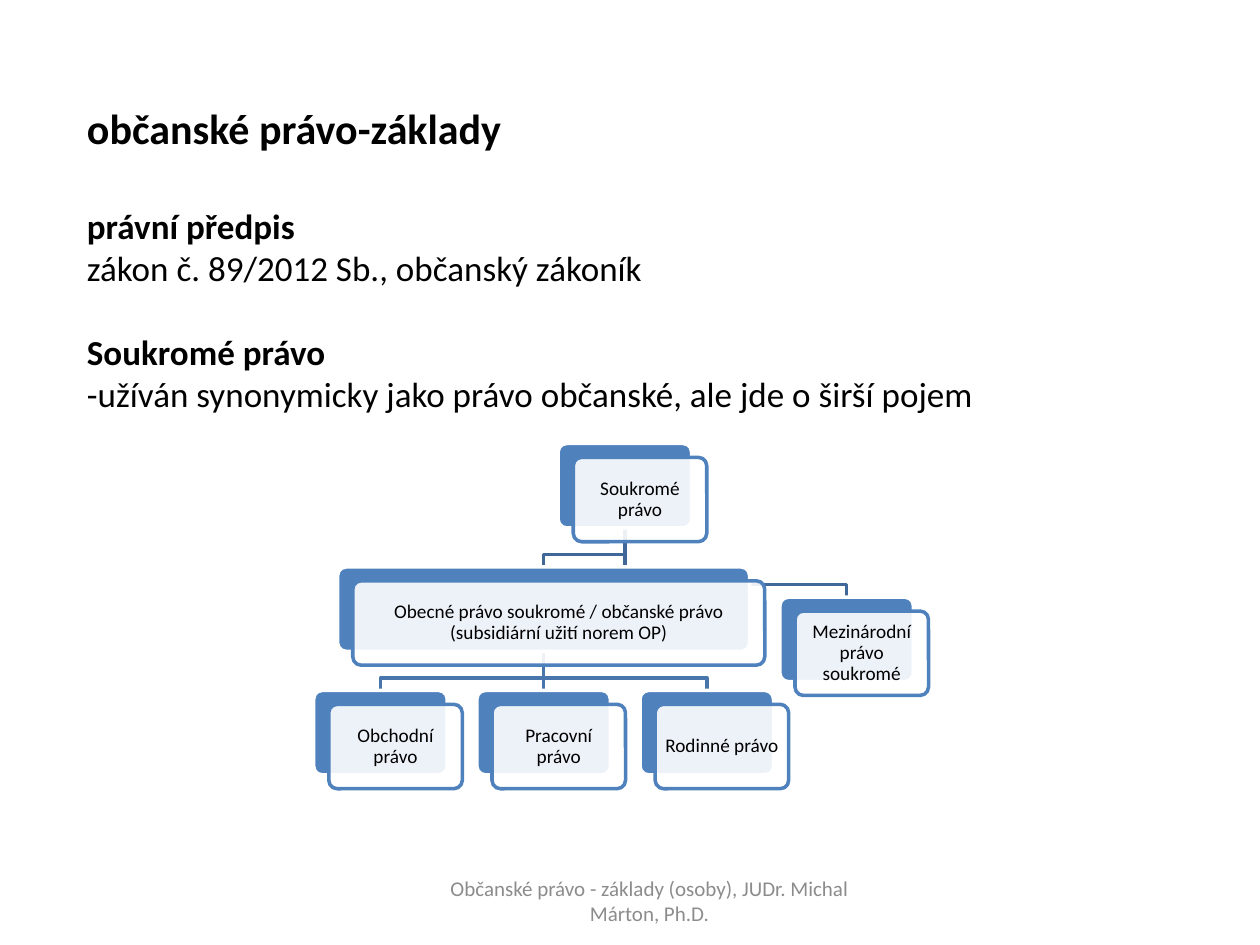
import pptx
import pptx.util
import pptx.dml.color
import pptx.enum.shapes
import pptx.enum.text
import pptx.oxml
import pptx.oxml.ns

Inches, Pt = pptx.util.Inches, pptx.util.Pt
KIND = pptx.enum.shapes.MSO_SHAPE
ALIGN = pptx.enum.text.PP_ALIGN
ANCHOR = pptx.enum.text.MSO_ANCHOR

# Content
TITLE = "občanské právo-základy"
BODY = [  # heading, explanation
    ("právní předpis", "zákon č. 89/2012 Sb., občanský zákoník"),
    ("Soukromé právo",
     "-užíván synonymicky jako právo občanské, ale jde o širší pojem"),
]
FOOTER = "Občanské právo - základy (osoby), JUDr. Michal Márton, Ph.D."

NARROW, WIDE, HIGH = 1.06, 3.27, 0.67
TOP, STEP, MID, GAP = 3.52, 0.98, 4.315, 1.295
TREE = {  # key: (text, parent, centre, top, width)
    "private": ("Soukromé právo", None, 4.96, TOP, NARROW),
    "general": ("Obecné právo soukromé / občanské právo "
                "(subsidiární užití norem OP)",
                "private", MID, TOP + STEP, WIDE),
    "trade": ("Obchodní právo", "general", MID - GAP, TOP + 2 * STEP, NARROW),
    "labour": ("Pracovní právo", "general", MID, TOP + 2 * STEP, NARROW),
    "family": ("Rodinné právo", "general", MID + GAP, TOP + 2 * STEP, NARROW),
    "world": ("Mezinárodní právo soukromé", "private", 6.72, 4.74, NARROW),
}

THEME = {
    "font": "Calibri", "title": 24, "body": 20, "card": 11, "foot": 12,
    "black": "000000", "white": "FFFFFF", "grey": "8C8C8C", "blue": "4F81BD",
    "private": "3F6797", "general": "4875AC", "line": 2,
}


def tint(name):
    return pptx.dml.color.RGBColor.from_string(THEME[name])


def write(par, text, size, color="black", bold=False, align=ALIGN.JUSTIFY):
    par.alignment = align
    run = par.add_run()
    run.text = text
    font = run.font
    font.name, font.size, font.bold = THEME["font"], Pt(THEME[size]), bold
    font.color.rgb = tint(color)


def place(shape, left, top, width, height):
    shape.left, shape.top = Inches(left), Inches(top)
    shape.width, shape.height = Inches(width), Inches(height)
    frame = shape.text_frame
    frame.word_wrap = True
    frame.auto_size = pptx.enum.text.MSO_AUTO_SIZE.NONE
    frame.vertical_anchor = ANCHOR.TOP
    return frame


def plain(par):
    props = par._p.get_or_add_pPr()
    props.set("marL", "0")
    props.set("indent", "0")
    props.append(pptx.oxml.parse_xml(
        "<a:buNone %s/>" % pptx.oxml.ns.nsdecls("a")))


def link(shapes, key):
    _, up, x2, y2, _ = TREE[key]
    _, _, x1, y1, _ = TREE[up]
    y1 += HIGH
    bend = y2 - 0.1
    if x1 == x2:
        shape = shapes.add_connector(
            pptx.enum.shapes.MSO_CONNECTOR.STRAIGHT,
            Inches(x1), Inches(y1), Inches(x2), Inches(y2))
        shape._element.spPr.append(pptx.oxml.parse_xml(
            "<a:effectLst %s/>" % pptx.oxml.ns.nsdecls("a")))
    else:
        pen = shapes.build_freeform(Inches(x1), Inches(y1))
        pen.add_line_segments(
            [(Inches(x), Inches(y))
             for x, y in ((x1, bend), (x2, bend), (x2, y2))], close=False)
        shape = pen.convert_to_shape()
        shape.fill.background()
        shape.shadow.inherit = False
    shape.line.color.rgb = tint(up)
    shape.line.width = Pt(THEME["line"])


def panel(shapes, left, top, width, fill, line):
    shape = shapes.add_shape(KIND.ROUNDED_RECTANGLE, Inches(left), Inches(top),
                             Inches(width), Inches(HIGH))
    shape.adjustments[0] = 0.1
    shape.shadow.inherit = False
    shape.fill.solid()
    shape.fill.fore_color.rgb = tint(fill)
    shape.line.color.rgb = tint(line)
    shape.line.width = Pt(THEME["line"])
    return shape


def card(shapes, text, mid, top, width):
    left = mid - width / 2
    panel(shapes, left, top, width, "blue", "white")
    front = panel(shapes, left + 0.12, top + 0.11, width, "white", "blue")
    color = front._element.spPr.find(".//" + pptx.oxml.ns.qn("a:srgbClr"))
    color.append(pptx.oxml.parse_xml(
        '<a:alpha %s val="90000"/>' % pptx.oxml.ns.nsdecls("a")))
    frame = front.text_frame
    frame.word_wrap = True
    frame.vertical_anchor = ANCHOR.MIDDLE
    frame.margin_left = frame.margin_right = Inches(0.06)
    frame.margin_top = frame.margin_bottom = Inches(0.06)
    par = frame.paragraphs[0]
    par.line_spacing = 0.9
    write(par, text, "card", align=ALIGN.CENTER)


def main():
    deck = pptx.Presentation()
    deck.slide_width, deck.slide_height = Inches(10), Inches(7.5)
    slide = deck.slides.add_slide(deck.slide_layouts[1])
    shapes = slide.shapes

    # Title and body
    frame = place(shapes.title, 0.59, 0.76, 8.9, 0.55)
    write(frame.paragraphs[0], TITLE, "title", bold=True)
    frame = place(slide.placeholders[1], 0.59, 1.57, 8.9, 1.9)
    for i, pair in enumerate(BODY):
        for j, text in enumerate(pair):
            first = i == j == 0
            par = frame.paragraphs[0] if first else frame.add_paragraph()
            par.space_before = Pt(24 if i and not j else 0)
            plain(par)
            write(par, text, "body", bold=not j)

    # Footer
    foot = shapes.add_textbox(0, 0, 0, 0)
    frame = place(foot, 3.42, 6.95, 3.47, 0.4)
    frame.vertical_anchor = ANCHOR.MIDDLE
    write(frame.paragraphs[0], FOOTER, "foot", "grey", align=ALIGN.CENTER)

    # Tree: links behind, cards in front
    for key, node in TREE.items():
        if node[1]:
            link(shapes, key)
    for text, _, mid, top, width in TREE.values():
        card(shapes, text, mid, top, width)

    deck.save("out.pptx")


if __name__ == "__main__":
    main()
